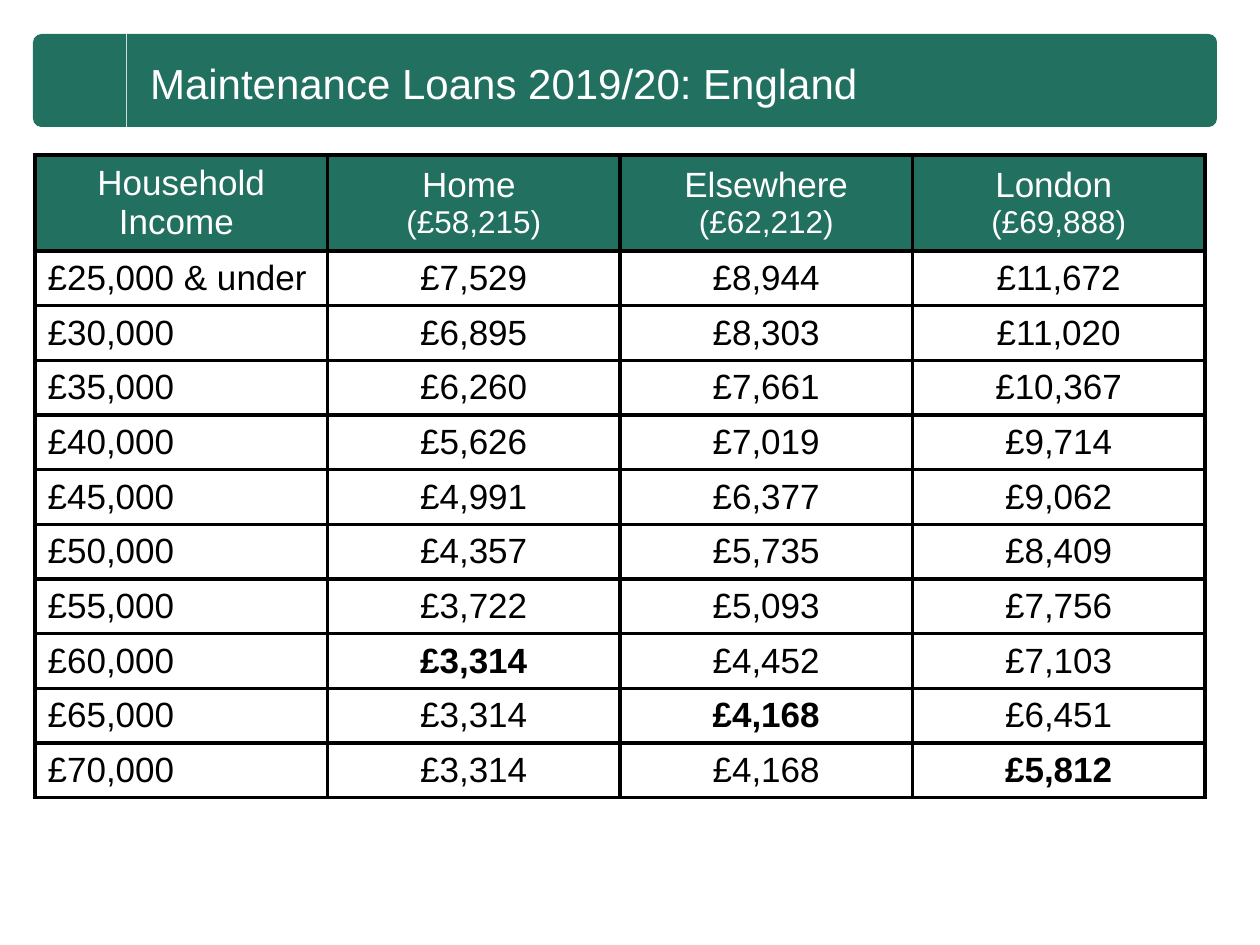
from lxml.etree import SubElement
from pptx import Presentation
from pptx.dml.color import RGBColor
from pptx.enum.shapes import MSO_SHAPE
from pptx.enum.text import MSO_ANCHOR, MSO_AUTO_SIZE, PP_ALIGN
from pptx.oxml.ns import qn
from pptx.util import Emu, Pt

# Content
TITLE = "Maintenance Loans 2019/20: England"
# Each heading is a list of paragraphs, each a list of (text, size) runs
HEADINGS = [
    [[("Household Income ", 20)]],
    [[("Home ", 20)], [("(£58,215)", 18)]],
    [[("Elsewhere ", 20), ("(£62,212)", 18)]],
    [[("London ", 20)], [("(£69,888)", 18)]],
]
LOANS = [
    ("£25,000 & under", "£7,529", "£8,944", "£11,672"),
    ("£30,000", "£6,895", "£8,303", "£11,020"),
    ("£35,000", "£6,260", "£7,661", "£10,367"),
    ("£40,000", "£5,626", "£7,019", "£9,714"),
    ("£45,000", "£4,991", "£6,377", "£9,062"),
    ("£50,000", "£4,357", "£5,735", "£8,409"),
    ("£55,000", "£3,722", "£5,093", "£7,756"),
    ("£60,000", "£3,314", "£4,452", "£7,103"),
    ("£65,000", "£3,314", "£4,168", "£6,451"),
    ("£70,000", "£3,314", "£4,168", "£5,812"),
]
MINIMUM_LOANS = {(8, 1), (9, 2), (10, 3)}  # (row, column) in bold

FONT, GREEN, WHITE, BLACK = "Arial", "227060", "FFFFFF", "000000"
TABLE_LEFT, TABLE_TOP, TABLE_W = 35, 155, 1170
HEADER_H, BODY_H = 96, 547


def px(n):
    return Emu(round(n * 914400 / 126))


def rgb(color):
    return RGBColor.from_string(color)


def set_font(font, color, size=None, bold=None):
    font.name = FONT
    font.color.rgb = rgb(color)
    font.bold = bold
    if size:
        font.size = Pt(size)


def add_banner_part(s, left, top, width, height, rotation):
    """Add a part whose rounded end points left (270) or right (90)."""
    x, y = left + (width - height) / 2, top + (height - width) / 2
    sp = s.shapes.add_shape(MSO_SHAPE.ROUND_2_SAME_RECTANGLE,
                            px(x), px(y), px(height), px(width))
    sp.rotation = rotation
    sp.adjustments[0] = 0.09
    sp.shadow.inherit = False
    sp.fill.solid()
    sp.fill.fore_color.rgb = rgb(GREEN)
    sp.line.fill.background()
    return sp


def format_cell(cell, fill):
    cell.vertical_anchor = MSO_ANCHOR.MIDDLE
    cell.fill.solid()
    cell.fill.fore_color.rgb = rgb(fill)
    tc_pr = cell._tc.get_or_add_tcPr()
    for i, side in enumerate(("lnL", "lnR", "lnT", "lnB")):
        ln = SubElement(tc_pr, qn(f"a:{side}"), w=str(Pt(2.25)))
        SubElement(SubElement(ln, qn("a:solidFill")), qn("a:srgbClr"), val=BLACK)
        tc_pr.insert(i, ln)  # borders go before the fill


def write_heading(cell, paragraphs):
    tf = cell.text_frame
    for i, runs in enumerate(paragraphs):
        p = tf.add_paragraph() if i else tf.paragraphs[0]
        p.alignment = PP_ALIGN.CENTER
        set_font(p.font, WHITE)
        for text, size in runs:
            r = p.add_run()
            r.text = text
            set_font(r.font, WHITE, size)


def main():
    prs = Presentation()
    prs.slide_width, prs.slide_height = px(1260), px(945)
    s = prs.slides.add_slide(prs.slide_layouts[5])

    # Title
    title = s.shapes.title
    title.left, title.top, title.width, title.height = map(px, (144, 45, 1084, 63))
    tf = title.text_frame
    tf.text = TITLE
    tf.word_wrap = True
    tf.auto_size = MSO_AUTO_SIZE.NONE
    tf.vertical_anchor = MSO_ANCHOR.TOP
    tf.margin_left = tf.margin_right = tf.margin_bottom = px(6)
    tf.margin_top = px(12)
    p = tf.paragraphs[0]
    p.alignment = PP_ALIGN.LEFT
    set_font(p.font, WHITE, 24)

    # Banner, behind the title
    for left, width, rotation in ((33, 93, 270), (127, 1090, 90)):
        sp = add_banner_part(s, left, 34, width, 93, rotation)
        title.element.addprevious(sp.element)

    # Loan table
    n_rows, n_cols = len(LOANS) + 1, len(HEADINGS)
    table = s.shapes.add_table(n_rows, n_cols, px(TABLE_LEFT), px(TABLE_TOP),
                               px(TABLE_W), px(HEADER_H + BODY_H)).table
    table.first_row = table.horz_banding = False
    for col in table.columns:
        col.width = px(TABLE_W / n_cols)
    for i, row in enumerate(table.rows):
        row.height = px(BODY_H / len(LOANS) if i else HEADER_H)

    for j, heading in enumerate(HEADINGS):
        write_heading(table.cell(0, j), heading)
        format_cell(table.cell(0, j), GREEN)
    for i, values in enumerate(LOANS, 1):
        for j, value in enumerate(values):
            cell = table.cell(i, j)
            cell.text = value
            p = cell.text_frame.paragraphs[0]
            p.alignment = PP_ALIGN.CENTER if j else PP_ALIGN.LEFT
            set_font(p.font, BLACK, 20, (i, j) in MINIMUM_LOANS)
            format_cell(cell, WHITE)

    prs.save("out.pptx")


if __name__ == "__main__":
    main()
